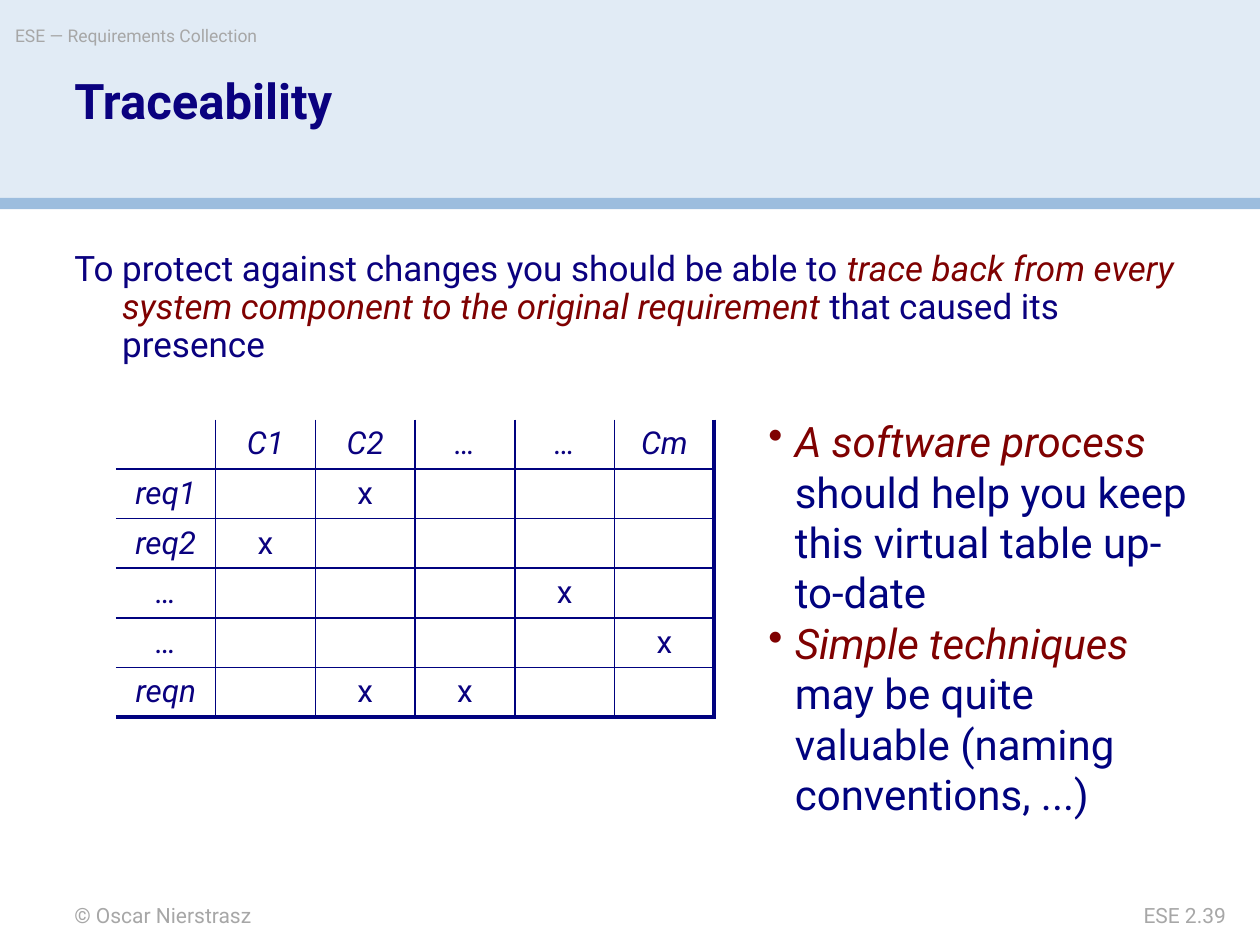
import pptx
import pptx.util
import pptx.dml.color
import pptx.enum.shapes
import pptx.enum.text
import pptx.oxml.ns
from lxml import etree

Inches = pptx.util.Inches
Pt = pptx.util.Pt
ALIGN = pptx.enum.text.PP_ALIGN
MIDDLE = pptx.enum.text.MSO_ANCHOR.MIDDLE
qn = pptx.oxml.ns.qn
HUES = {"band": "E1EBF5", "rule": "9CBDDE", "grey": "A7A7A7",
        "navy": "0A017F", "blue": "00027F", "red": "7F0101"}


def rgb(hue):
    return pptx.dml.color.RGBColor.from_string(HUES[hue])


def write(frame, *paras, size=12, hue="grey", bold=False, slant=False,
          align=ALIGN.LEFT, space=1.0, hang=0, mark=None):
    """Fill a frame; a paragraph is a list of (text, is key phrase) pairs."""
    for n, parts in enumerate(paras):
        para = frame.add_paragraph() if n else frame.paragraphs[0]
        para.alignment, para.line_spacing = align, space
        para.font.size = Pt(size)
        props = para._p.get_or_add_pPr()
        if hang:
            props.set("marL", str(Inches(hang)))
            props.set("indent", str(-Inches(hang)))
        if mark:
            bullet = etree.Element(qn("a:buChar"), char=mark)
            props.insert_element_before(bullet, "a:tabLst", "a:defRPr")
        for text, key in [(parts, False)] if isinstance(parts, str) else parts:
            run = para.add_run()
            run.text = text
            font = run.font
            font.name, font.size, font.bold = "Roboto", Pt(size), bold
            font.italic = slant or key
            font.color.rgb = rgb("red" if key else hue)


deck = pptx.Presentation()
deck.slide_width, deck.slide_height = Inches(10), Inches(7.5)
slide = deck.slides.add_slide(deck.slide_layouts[6])

# Header band and rule
for top, high, hue in [(0, 1.58, "band"), (1.57, 0.09, "rule")]:
    bar = slide.shapes.add_shape(
        pptx.enum.shapes.MSO_SHAPE.RECTANGLE,
        0, Inches(top), Inches(10), Inches(high))
    bar.shadow.inherit = False
    bar.fill.solid()
    bar.fill.fore_color.rgb = rgb(hue)
    bar.line.fill.background()

# Footer, running head, title and lead sentence
lead = [("To protect against changes you should be able to ", False),
        ("trace back from every system component to the original requirement",
         True),
        (" that caused its presence", False)]
texts = [
    ("© Oscar Nierstrasz", (0.59, 7.16, 4.17, 0.2), {}),
    ("ESE — Requirements Collection", (0.12, 0.2, 5.9, 0.28), {"size": 10}),
    ("ESE 2.39", (8.25, 7.16, 1.48, 0.2), {"align": ALIGN.RIGHT}),
    ("Traceability", (0.59, 0.61, 8.83, 0.89),
     {"size": 28, "hue": "navy", "bold": True, "space": 0.9}),
    (lead, (0.59, 1.81, 8.82, 1.27),
     {"size": 20, "hue": "navy", "space": 0.9, "hang": 0.38}),
]
for text, place, style in texts:
    frame = slide.shapes.add_textbox(*map(Inches, place)).text_frame
    frame.margin_left = frame.margin_right = 0
    frame.margin_top = frame.margin_bottom = 0
    frame.word_wrap = True
    if text is lead:
        frame.vertical_anchor = MIDDLE
    write(frame, text, **style)

# Trace table: requirements by components
heads = ["", "C1", "C2", "…", "…", "Cm"]
names = ["", "req1", "req2", "…", "…", "reqn"]
marks = {(1, 2), (2, 1), (3, 4), (4, 5), (5, 2), (5, 3)}
count = len(heads)
last = count - 1
grid = slide.shapes.add_table(count, count, Inches(0.92), Inches(3.33),
                              Inches(4.75), Inches(2.36)).table
grid.first_row = grid.horz_banding = False
for r in range(count):
    for c in range(count):
        cell = grid.cell(r, c)
        cell.fill.background()
        cell.vertical_anchor = MIDDLE
        cell.margin_top = cell.margin_bottom = 0
        text = heads[c] if r == 0 else names[r] if c == 0 else ""
        if (r, c) in marks:
            text = "x"
        write(cell.text_frame, text, size=18, hue="navy", space=0.95,
              slant=r == 0 or c == 0, align=ALIGN.CENTER)
        # Inner lines are thin, the right and bottom edges thick,
        # the left and top edges open
        sides = [("L", 1 if c else 0), ("R", 2.25 if c == last else 1),
                 ("T", 1 if r else 0), ("B", 2.25 if r == last else 1)]
        props = cell._tc.get_or_add_tcPr()
        for n, (side, wide) in enumerate(sides):
            edge = etree.Element(qn("a:ln" + side), w=str(Pt(wide)))
            if wide:
                paint = etree.SubElement(edge, qn("a:solidFill"))
                etree.SubElement(paint, qn("a:srgbClr"), val=HUES["blue"])
            else:
                etree.SubElement(edge, qn("a:noFill"))
            props.insert(n, edge)

# Remarks beside the table
frame = slide.shapes.add_textbox(Inches(6), Inches(3.25),
                                 Inches(3.58), Inches(3.3)).text_frame
frame.word_wrap = True
write(frame,
      [("A software process", True),
       (" should help you keep this virtual table up-to-date", False)],
      [("Simple techniques", True),
       (" may be quite valuable (naming conventions, ...)", False)],
      size=24, hue="blue", hang=0.21, mark="•")

deck.save("out.pptx")
